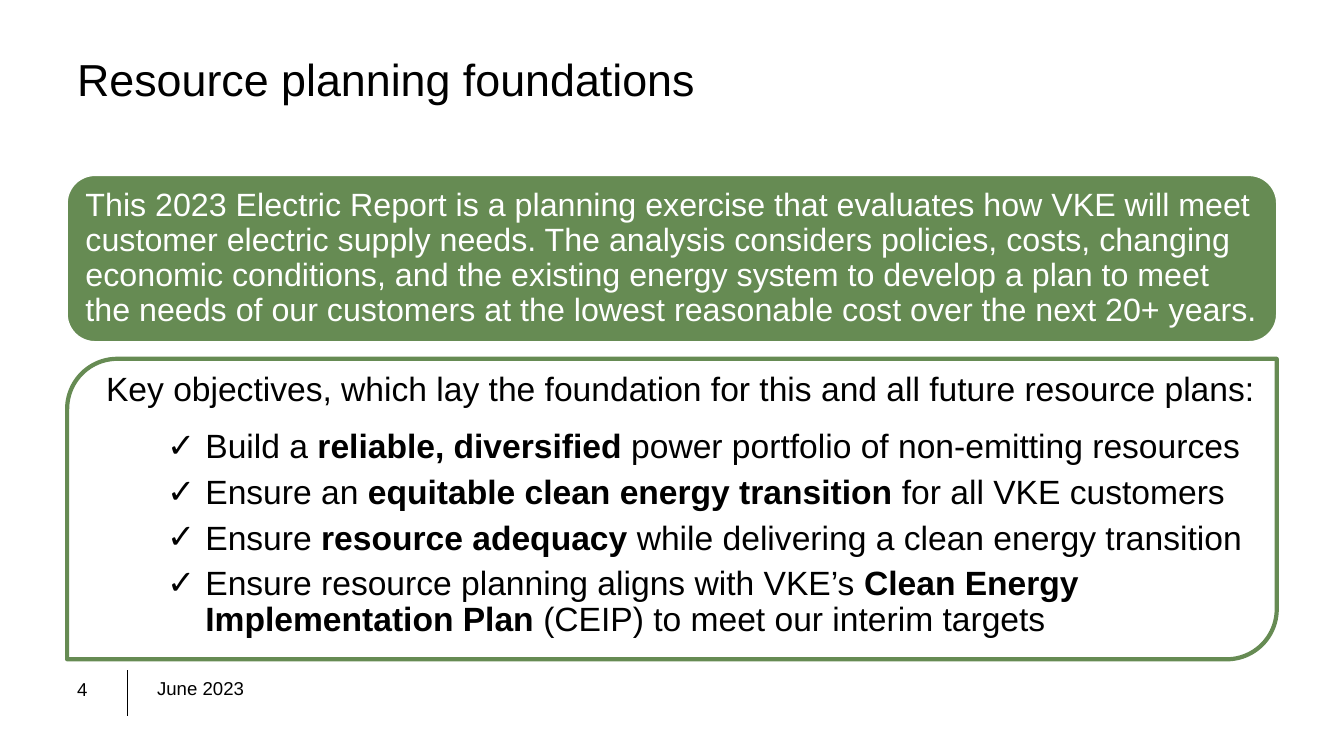
from dataclasses import dataclass

from lxml.etree import SubElement
from pptx import Presentation
from pptx.dml.color import RGBColor
from pptx.enum.shapes import MSO_CONNECTOR, MSO_SHAPE
from pptx.enum.text import MSO_ANCHOR
from pptx.oxml.ns import qn
from pptx.util import Pt

FONT = "Arial"
COLORS = {"black": "000000", "white": "FFFFFF", "green": "668B53"}


@dataclass(frozen=True)
class Box:
    left: float
    top: float
    width: float
    height: float

    def lengths(self) -> list[Pt]:
        return [Pt(v) for v in (self.left, self.top, self.width, self.height)]


@dataclass(frozen=True)
class Run:
    text: str
    bold: bool = False


@dataclass(frozen=True)
class Paragraph:
    runs: tuple[Run, ...]
    size: float
    color: str = "black"
    spacing: float = 0.9
    before: float = 0
    after: float = 0
    left: float = 0
    hanging: float = 0
    bullet: str = ""


@dataclass(frozen=True)
class Label:
    box: Box
    paragraphs: tuple[Paragraph, ...]
    anchor: MSO_ANCHOR = MSO_ANCHOR.TOP
    inset: float = 3.6


@dataclass(frozen=True)
class Panel:
    box: Box
    outline: MSO_SHAPE
    fill: str
    line: str
    line_width: float


def rgb(name: str) -> RGBColor:
    return RGBColor.from_string(COLORS[name])


def draw_panel(slide, panel: Panel) -> None:
    shape = slide.shapes.add_shape(panel.outline, *panel.box.lengths())
    shape.shadow.inherit = False
    if panel.fill:
        shape.fill.solid()
        shape.fill.fore_color.rgb = rgb(panel.fill)
    else:
        shape.fill.background()
    shape.line.color.rgb = rgb(panel.line)
    shape.line.width = Pt(panel.line_width)


def write_paragraph(target, content: Paragraph) -> None:
    target.line_spacing = content.spacing
    target.space_before = Pt(content.before)
    target.space_after = Pt(content.after)
    properties = target._p.get_or_add_pPr()
    properties.set("marL", str(Pt(content.left)))
    properties.set("indent", str(Pt(-content.hanging)))
    if content.bullet:
        SubElement(properties, qn("a:buFont")).set("typeface", FONT)
        SubElement(properties, qn("a:buChar")).set("char", content.bullet)
    for part in content.runs:
        run = target.add_run()
        run.text = part.text
        run.font.name = FONT
        run.font.size = Pt(content.size)
        run.font.bold = part.bold
        run.font.color.rgb = rgb(content.color)


def draw_label(slide, label: Label) -> None:
    frame = slide.shapes.add_textbox(*label.box.lengths()).text_frame
    frame.word_wrap = True
    frame.vertical_anchor = label.anchor
    frame.margin_top = frame.margin_bottom = Pt(label.inset)
    for index, content in enumerate(label.paragraphs):
        target = frame.add_paragraph() if index else frame.paragraphs[0]
        write_paragraph(target, content)


def draw_divider(slide, x: float, top: float, bottom: float) -> None:
    divider = slide.shapes.add_connector(
        MSO_CONNECTOR.STRAIGHT, Pt(x), Pt(top), Pt(x), Pt(bottom))
    divider.line.color.rgb = rgb("black")
    divider.line.width = Pt(0.75)
    SubElement(divider._element.spPr, qn("a:effectLst"))


def objective(lead: str, emphasis: str, rest: str) -> Paragraph:
    return Paragraph((Run(lead), Run(emphasis, True), Run(rest)), 24,
                     before=6.7, left=84.24, hanging=27.36, bullet="✓")


MARGIN, WIDTH = 48, 864

PANELS = (
    Panel(Box(MARGIN, 125.3, WIDTH, 118.8), MSO_SHAPE.ROUNDED_RECTANGLE,
          "green", "white", 1),
    Panel(Box(MARGIN, 256.3, WIDTH, 214.6), MSO_SHAPE.ROUND_2_DIAG_RECTANGLE,
          "", "green", 3),
)

SUMMARY = (
    "This 2023 Electric Report is a planning exercise that evaluates how VKE "
    "will meet customer electric supply needs. The analysis considers policies, "
    "costs, changing economic conditions, and the existing energy system to "
    "develop a plan to meet the needs of our customers at the lowest reasonable "
    "cost over the next 20+ years."
)

OBJECTIVES = (
    Paragraph((Run("Key objectives, which lay the foundation for this and all "
                   "future resource plans:"),), 24, after=8, left=13.3),
    objective("Build a ", "reliable, diversified ",
              "power portfolio of non-emitting resources"),
    objective("Ensure an ", "equitable clean energy transition ",
              "for all VKE customers"),
    objective("Ensure ", "resource adequacy ",
              "while delivering a clean energy transition"),
    objective("Ensure resource planning aligns with VKE’s ",
              "Clean Energy Implementation Plan ",
              "(CEIP) to meet our interim targets"),
)

LABELS = (
    Label(Box(MARGIN, 28.8, WIDTH, 59.8),
          (Paragraph((Run("Resource planning foundations"),), 32),),
          MSO_ANCHOR.MIDDLE),
    Label(Box(54, 131, 852.5, 107.3),
          (Paragraph((Run(SUMMARY),), 23, "white"),), MSO_ANCHOR.MIDDLE, 7.2),
    Label(Box(55.4, 262.8, WIDTH, 217.4), OBJECTIVES),
    Label(Box(MARGIN, 481, 40.3, 23.8),
          (Paragraph((Run("4"),), 13.3, spacing=1.0),)),
    Label(Box(105.1, 481.7, 331.9, 23.8),
          (Paragraph((Run("June 2023"),), 13.3),)),
)


def main() -> None:
    deck = Presentation()
    deck.slide_width, deck.slide_height = Pt(960), Pt(540)
    slide = deck.slides.add_slide(deck.slide_layouts[6])

    # Green summary panel and outlined objectives panel
    for panel in PANELS:
        draw_panel(slide, panel)

    # Title, panel texts and footer
    for label in LABELS:
        draw_label(slide, label)
    draw_divider(slide, 90.9, 478.8, 511.2)

    deck.save("out.pptx")


if __name__ == "__main__":
    main()
